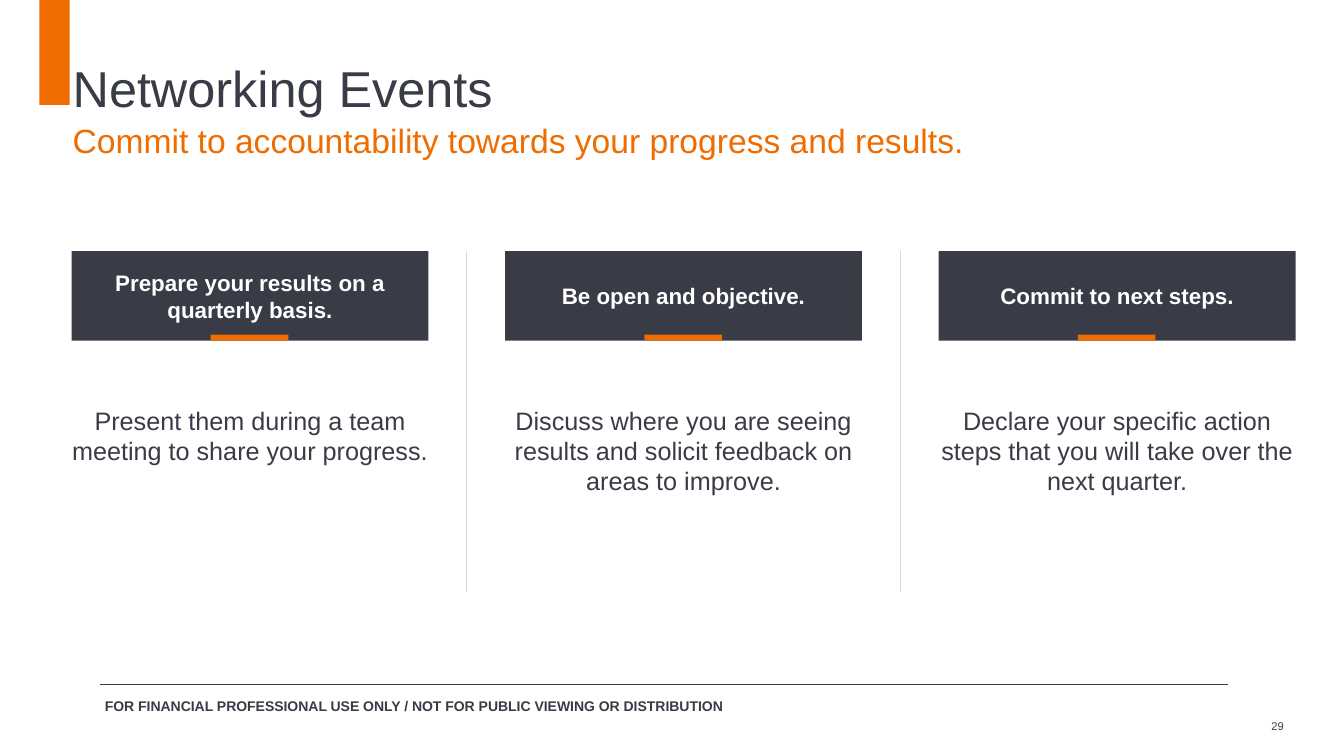
from dataclasses import dataclass

from lxml import etree
from pptx import Presentation
from pptx import util as u
from pptx.dml.color import RGBColor
from pptx.enum import shapes, text
from pptx.oxml import ns

PX = u.Inches(1) // 100
SLATE = RGBColor(0x39, 0x3C, 0x46)
ORANGE = RGBColor(0xEF, 0x6C, 0x00)
GREY = RGBColor(0xD9, 0xD9, 0xD9)
WHITE = RGBColor(0xFF, 0xFF, 0xFF)

COLUMN_LEFT, COLUMN_PITCH, COLUMN_WIDTH = 71, 430, 354
HEADER_TOP, HEADER_HEIGHT = 249, 89
ACCENT_WIDTH, ACCENT_HEIGHT = 77, 6
DIVIDER_OFFSET, DIVIDER_BOTTOM = 392, 587
BODY_TOP, BODY_HEIGHT, BODY_OVERHANG = 402, 93, 6


@dataclass(frozen=True)
class Line:
    words: str
    size: float
    color: RGBColor = SLATE
    bold: bool = False
    before: float = 0


@dataclass(frozen=True)
class Step:
    heading: str
    detail: str


STEPS = [
    Step("Prepare your results on a quarterly basis.",
         "Present them during a team meeting to share your progress."),
    Step("Be open and objective.",
         "Discuss where you are seeing results and solicit feedback on areas to improve."),
    Step("Commit to next steps.",
         "Declare your specific action steps that you will take over the next quarter."),
]


def write(box, lines: list[Line], align=text.PP_ALIGN.LEFT,
          anchor=text.MSO_ANCHOR.TOP) -> None:
    frame = box.text_frame
    settings = {"word_wrap": True, "vertical_anchor": anchor, "margin_left": 0,
                "margin_right": 0, "margin_top": 0, "margin_bottom": 0}
    for name, value in settings.items():
        setattr(frame, name, value)
    for index, line in enumerate(lines):
        para = frame.add_paragraph() if index else frame.paragraphs[0]
        para.alignment = align
        if index:
            para.space_before = u.Pt(line.before)
        span = para.add_run()
        span.text = line.words
        span.font.color.rgb = line.color
        settings = {"name": "Arial", "size": u.Pt(line.size), "bold": line.bold}
        for name, value in settings.items():
            setattr(span.font, name, value)


def add_text(page, left: int, top: int, width: int, height: int,
             lines: list[Line], align=text.PP_ALIGN.LEFT) -> None:
    box = page.shapes.add_textbox(left * PX, top * PX, width * PX, height * PX)
    write(box, lines, align)


def add_block(page, left: int, top: int, width: int, height: int, color: RGBColor):
    block = page.shapes.add_shape(shapes.MSO_SHAPE.RECTANGLE, left * PX, top * PX,
                                  width * PX, height * PX)
    block.shadow.inherit = False
    block.fill.solid()
    block.fill.fore_color.rgb = color
    block.line.fill.background()
    return block


def add_rule(page, x1: int, y1: int, x2: int, y2: int,
             color: RGBColor, weight: float) -> None:
    rule = page.shapes.add_connector(shapes.MSO_CONNECTOR.STRAIGHT,
                                     x1 * PX, y1 * PX, x2 * PX, y2 * PX)
    rule.line.color.rgb = color
    rule.line.width = u.Pt(weight)
    etree.SubElement(rule._element.spPr, ns.qn("a:effectLst"))


def add_step(page, left: int, step: Step) -> None:
    header = add_block(page, left, HEADER_TOP, COLUMN_WIDTH, HEADER_HEIGHT, SLATE)
    write(header, [Line(step.heading, 16, WHITE, True)],
          text.PP_ALIGN.CENTER, text.MSO_ANCHOR.MIDDLE)
    add_block(page, left + (COLUMN_WIDTH - ACCENT_WIDTH) // 2,
              HEADER_TOP + HEADER_HEIGHT - ACCENT_HEIGHT,
              ACCENT_WIDTH, ACCENT_HEIGHT, ORANGE)
    add_text(page, left - BODY_OVERHANG, BODY_TOP, COLUMN_WIDTH + 2 * BODY_OVERHANG,
             BODY_HEIGHT, [Line(step.detail, 18)], text.PP_ALIGN.CENTER)


def main() -> None:
    deck = Presentation()
    deck.slide_width, deck.slide_height = 1333 * PX, 750 * PX
    page = deck.slides.add_slide(deck.slide_layouts[6])

    add_block(page, 39, 0, 30, 104, ORANGE)
    add_text(page, 72, 57, 1191, 98, [
        Line("Networking Events", 36),
        Line("Commit to accountability towards your progress and results.", 24,
             ORANGE, before=1.4),
    ])

    for index, step in enumerate(STEPS):
        left = COLUMN_LEFT + index * COLUMN_PITCH
        add_step(page, left, step)
        if index < len(STEPS) - 1:
            divider = left + DIVIDER_OFFSET
            add_rule(page, divider, HEADER_TOP, divider, DIVIDER_BOTTOM, GREY, 0.75)

    add_rule(page, 99, 679, 1218, 679, SLATE, 0.5)
    add_text(page, 104, 692, 640, 17, [
        Line("FOR FINANCIAL PROFESSIONAL USE ONLY / NOT FOR PUBLIC VIEWING OR DISTRIBUTION",
             10, bold=True),
    ])
    add_text(page, 1261, 714, 29, 14, [Line("29", 8)])
    deck.save("out.pptx")


if __name__ == "__main__":
    main()
